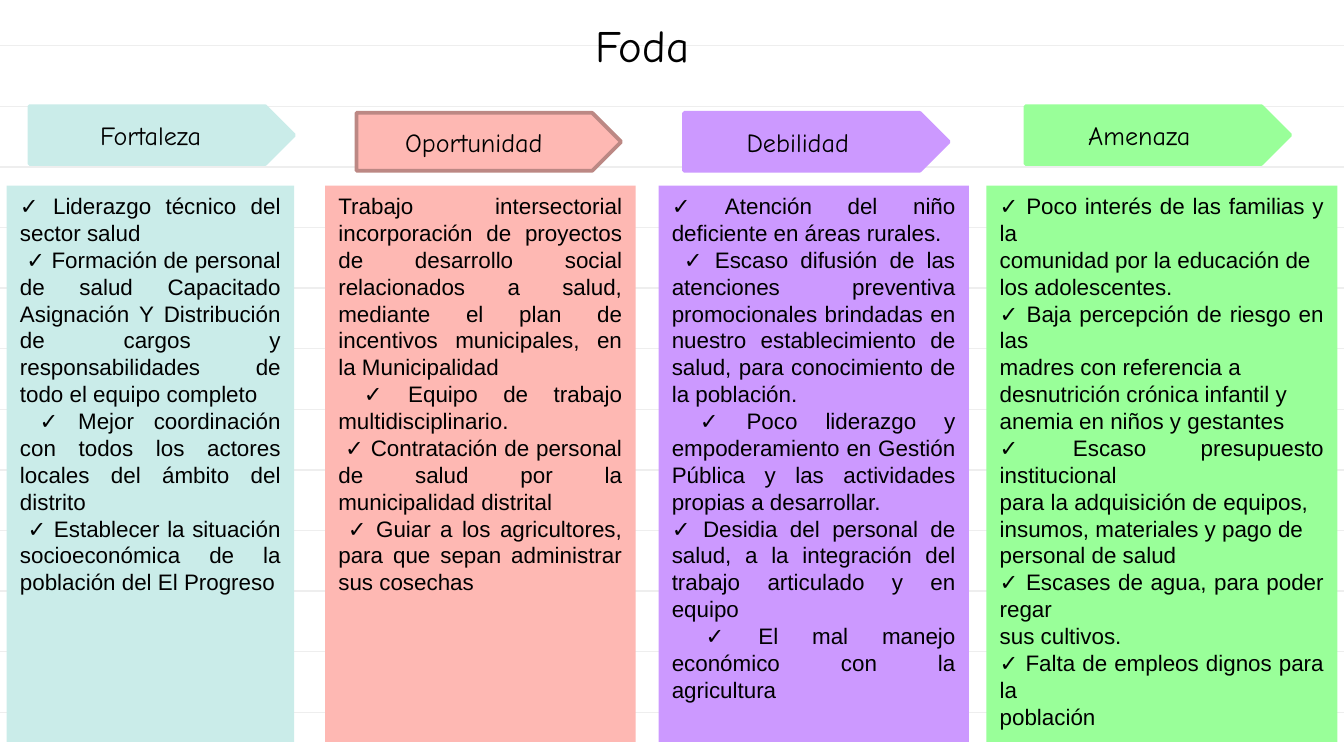
import pptx
import pptx.util
import pptx.dml.color
import pptx.enum.shapes
import pptx.enum.text
import pptx.oxml.ns
import lxml.etree

Pt = pptx.util.Pt
RGBColor = pptx.dml.color.RGBColor
SHAPE = pptx.enum.shapes.MSO_SHAPE
ALIGN = pptx.enum.text.PP_ALIGN
ANCHOR = pptx.enum.text.MSO_ANCHOR

BLACK = RGBColor(0x00, 0x00, 0x00)
GRAY = RGBColor(0xEE, 0xEE, 0xEE)
AQUA = RGBColor(0xCA, 0xEC, 0xE9)
PINK = RGBColor(0xFE, 0xB8, 0xB3)
ROSE = RGBColor(0xBC, 0x88, 0x84)
VIOLET = RGBColor(0xCC, 0x99, 0xFF)
GREEN = RGBColor(0x99, 0xFF, 0x99)

HAND = "Comic Neue"
PLAIN = "Arial"

STRENGTHS = [
    "✓ Liderazgo técnico del sector salud",
    " ✓ Formación de personal de salud Capacitado Asignación Y Distribución "
    "de cargos y responsabilidades de todo el equipo completo",
    " ✓ Mejor coordinación con todos los actores locales del ámbito del distrito",
    " ✓ Establecer la situación socioeconómica de la población del El Progreso",
]
CHANCES = [
    "Trabajo intersectorial incorporación de proyectos de desarrollo social "
    "relacionados a salud, mediante el plan de incentivos municipales, "
    "en la Municipalidad",
    " ✓ Equipo de trabajo multidisciplinario.",
    " ✓ Contratación de personal de salud por la municipalidad distrital",
    " ✓ Guiar a los agricultores, para que sepan administrar sus cosechas",
]
FLAWS = [
    "✓ Atención del niño deficiente en áreas rurales.",
    " ✓ Escaso difusión de las atenciones preventiva promocionales brindadas "
    "en nuestro establecimiento de salud, para conocimiento de la población.",
    " ✓ Poco liderazgo y empoderamiento en Gestión Pública y las actividades "
    "propias a desarrollar.",
    "✓ Desidia del personal de salud, a la integración del trabajo articulado "
    "y en equipo",
    " ✓ El mal manejo económico con la agricultura",
]
THREATS = [
    "✓ Poco interés de las familias y la",
    "comunidad por la educación de",
    "los adolescentes.",
    "✓ Baja percepción de riesgo en las",
    "madres con referencia a",
    "desnutrición crónica infantil y",
    "anemia en niños y gestantes",
    "✓ Escaso presupuesto institucional",
    "para la adquisición de equipos,",
    "insumos, materiales y pago de",
    "personal de salud",
    "✓ Escases de agua, para poder regar",
    "sus cultivos.",
    "✓ Falta de empleos dignos para la",
    "población",
]

# Each column: label, label left, label top, right pad, fill, edge, left, width, items
COLUMNS = [
    ("Fortaleza", 15.8, 56.9, 4, AQUA, AQUA, 3.6, 154, STRENGTHS),
    ("Oportunidad", 191, 60.5, 8, PINK, ROSE, 174.2, 166.3, CHANCES),
    ("Debilidad", 366.5, 60.5, 12, VIOLET, VIOLET, 352.8, 166.3, FLAWS),
    ("Amenaza", 549.4, 56.9, 12, GREEN, GREEN, 528.5, 188, THREATS),
]
COLUMNS_TOP = 99.4


def put_text(shape, lines, size, font, align, anchor, pad=0):
    frame = shape.text_frame
    frame.word_wrap = True
    frame.vertical_anchor = anchor
    frame.margin_left = Pt(7.2)
    frame.margin_right = Pt(7.2 + pad)
    for i, line in enumerate(lines):
        para = frame.paragraphs[0] if i == 0 else frame.add_paragraph()
        para.alignment = align
        run = para.add_run()
        run.text = line
        run.font.size = Pt(size)
        run.font.name = font
        run.font.color.rgb = BLACK


def add_block(slide, kind, left, top, width, height, fill, edge=None):
    shape = slide.shapes.add_shape(kind, Pt(left), Pt(top), Pt(width), Pt(height))
    shape.shadow.inherit = False
    shape.fill.solid()
    shape.fill.fore_color.rgb = fill
    if edge is None:
        shape.line.fill.background()
    else:
        shape.line.color.rgb = edge
        shape.line.width = Pt(2)
    return shape


def add_rule(slide, y):
    rule = slide.shapes.add_connector(
        pptx.enum.shapes.MSO_CONNECTOR.STRAIGHT, Pt(0), Pt(y), Pt(722), Pt(y))
    rule.line.color.rgb = GRAY
    rule.line.width = Pt(0.75)
    lxml.etree.SubElement(rule._element.spPr, pptx.oxml.ns.qn("a:effectLst"))


def add_title(slide):
    box = slide.shapes.add_textbox(Pt(146.2), Pt(-12.2), Pt(404), Pt(57.6))
    put_text(box, ["Foda"], 24, HAND, ALIGN.CENTER, ANCHOR.BOTTOM, pad=8)
    box.text_frame.margin_bottom = Pt(7.2)


def main():
    deck = pptx.Presentation()
    deck.slide_width = Pt(720)
    deck.slide_height = Pt(405)
    slide = deck.slides.add_slide(deck.slide_layouts[6])
    for i in range(12):
        add_rule(slide, 24.5 + 32.46 * i)
    add_title(slide)
    for label, x, y, pad, fill, edge, left, width, items in COLUMNS:
        arrow = add_block(slide, SHAPE.PENTAGON, x, y, 141.8, 31, fill, edge)
        put_text(arrow, [label], 14, HAND, ALIGN.CENTER, ANCHOR.MIDDLE, pad=pad)
        panel = add_block(slide, SHAPE.RECTANGLE, left, COLUMNS_TOP, width, 298, fill)
        put_text(panel, items, 12, PLAIN, ALIGN.JUSTIFY, ANCHOR.TOP)
    deck.save("out.pptx")


if __name__ == "__main__":
    main()
